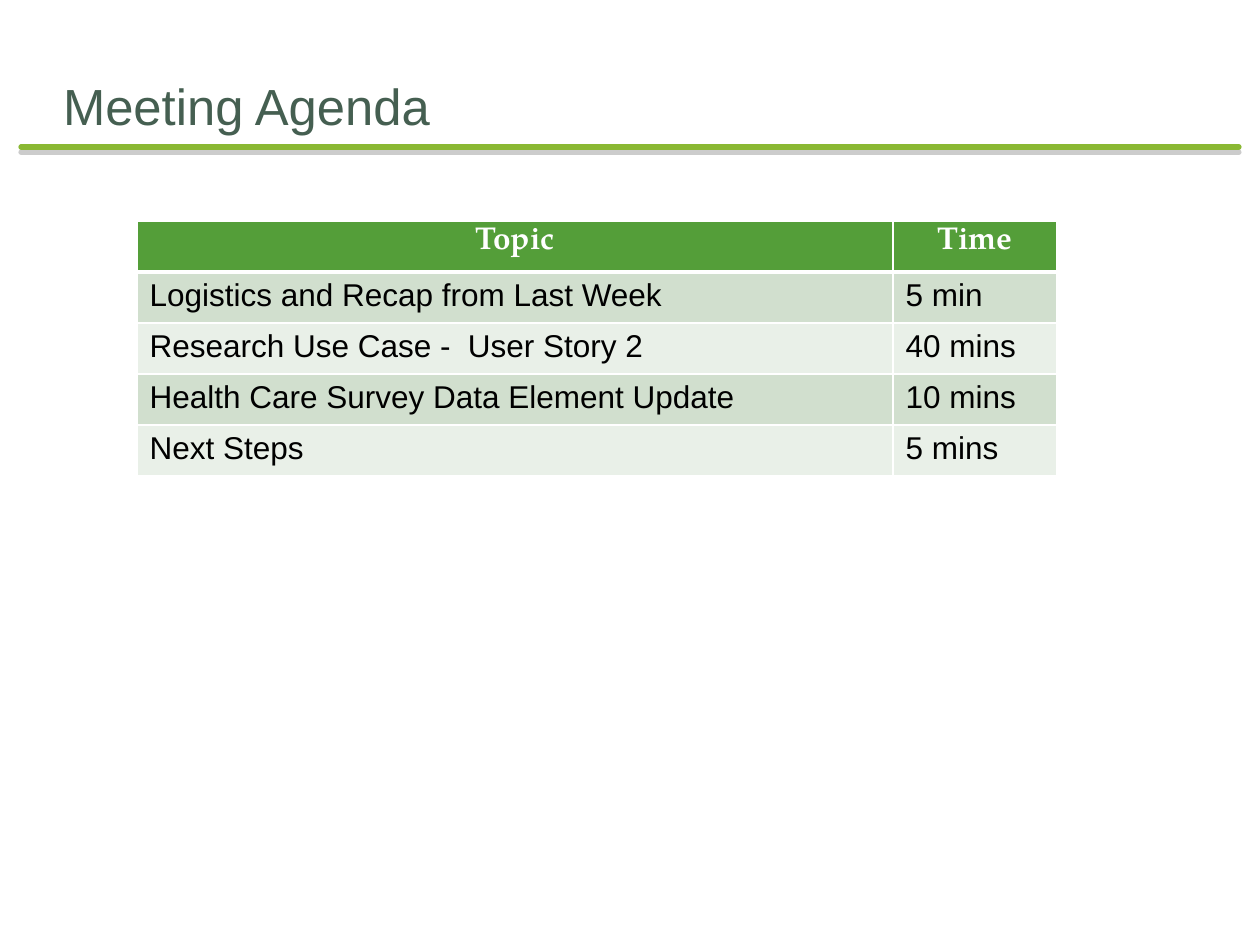
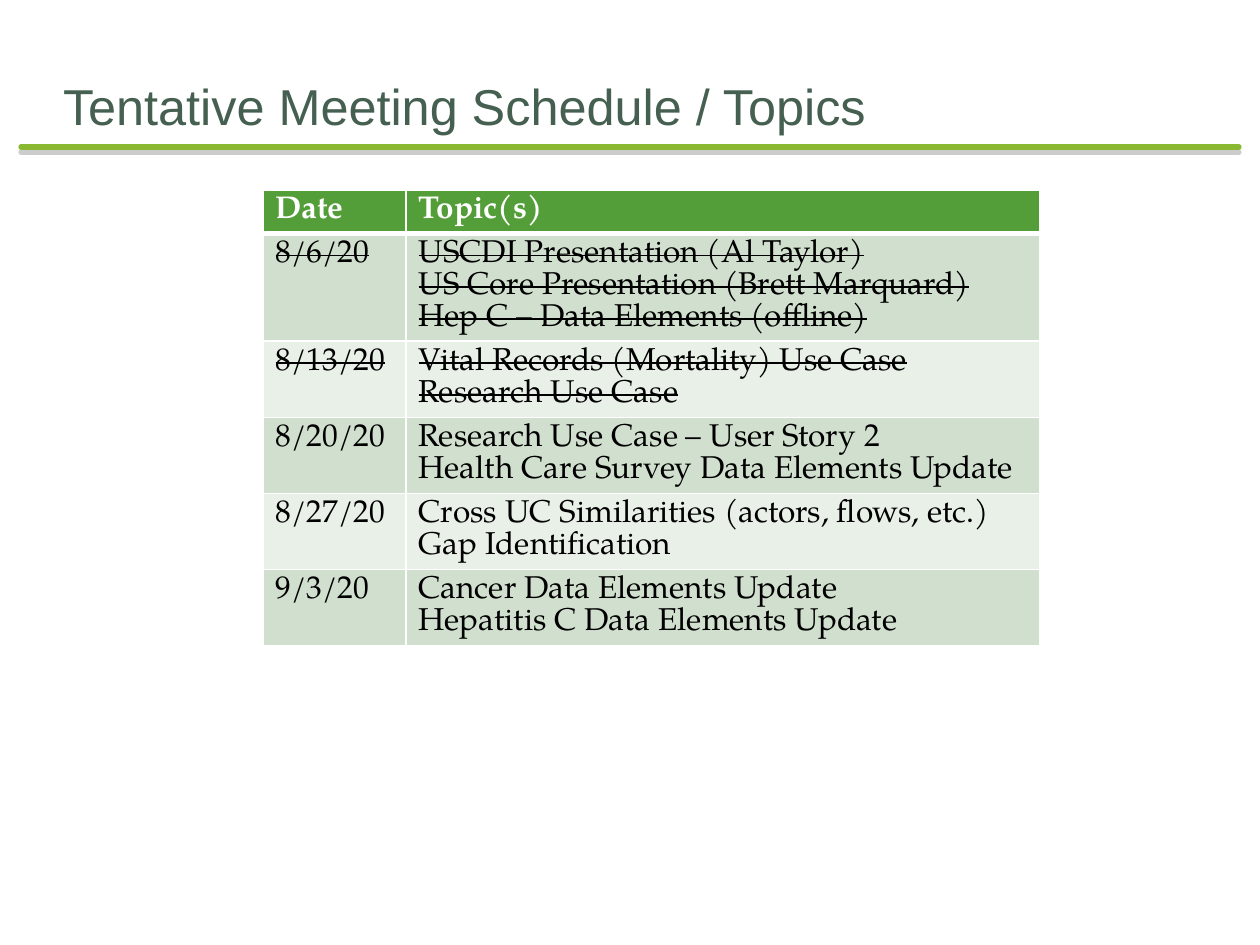
from lxml import etree
from pptx import Presentation
from pptx.dml.color import RGBColor
from pptx.enum.shapes import MSO_CONNECTOR
from pptx.enum.text import MSO_ANCHOR, MSO_AUTO_SIZE, PP_ALIGN
from pptx.oxml import parse_xml
from pptx.oxml.ns import nsdecls, qn
from pptx.util import Pt

PX = 914400 / 126
SLIDE_WIDTH, SLIDE_HEIGHT = 1260, 945
TITLE_ONLY_LAYOUT = 5

LEFT, CENTER = PP_ALIGN.LEFT, PP_ALIGN.CENTER
BOTTOM, TOP = MSO_ANCHOR.BOTTOM, MSO_ANCHOR.TOP
NO_AUTOFIT = MSO_AUTO_SIZE.NONE
STRAIGHT = MSO_CONNECTOR.STRAIGHT

SANS, SERIF = "Arial", "TeX Gyre Pagella"
WHITE, BLACK = "FFFFFF", "000000"
TITLE_COLOR, RULE_COLOR, SHADOW_COLOR = "455F51", "8AB833", "808080"
HEADER_FILL, BAND_FILLS = "549E39", ("D1DFCE", "E9F0E8")
TABLE_SIZE = 18

AGENDA = [
    ("Topic", "Time"),
    ("Logistics and Recap from Last Week", "5 min"),
    ("Research Use Case -  User Story 2", "40 mins"),
    ("Health Care Survey Data Element Update", "10 mins"),
    ("Next Steps", "5 mins"),
]
SCHEDULE = [
    ("Date", "Topic(s)"),
    ("8/6/20", "USCDI Presentation (Al Taylor)\n"
               "US Core Presentation (Brett Marquard)\n"
               "Hep C – Data Elements (offline)"),
    ("8/13/20", "Vital Records (Mortality) Use Case\nResearch Use Case"),
    ("8/20/20", "Research Use Case – User Story 2\n"
                "Health Care Survey Data Elements Update"),
    ("8/27/20", "Cross UC Similarities (actors, flows, etc.)\n"
                "Gap Identification"),
    ("9/3/20", "Cancer Data Elements Update\nHepatitis C Data Elements Update"),
]
PAST_MEETINGS = (1, 2)


def px(length):
    return round(length * PX)


def rgb(color):
    return RGBColor.from_string(color)


def style_text(frame, font, size, color, bold=False, align=LEFT, strike=False):
    for paragraph in frame.paragraphs:
        paragraph.alignment = align
        for run in paragraph.runs:
            run.font.name = font
            run.font.size = Pt(size)
            run.font.bold = bold
            run.font.color.rgb = rgb(color)
            if strike:
                run._r.get_or_add_rPr().set("strike", "sngStrike")


def add_title(slide, text, size):
    title = slide.shapes.title
    title.left, title.top = px(63), px(63)
    title.width, title.height = px(1134), px(73)
    frame = title.text_frame
    frame.text = text
    frame.word_wrap = True
    frame.auto_size = NO_AUTOFIT
    frame.vertical_anchor = BOTTOM
    frame.margin_left = frame.margin_right = frame.margin_bottom = 0
    frame.margin_top = px(6)
    style_text(frame, SANS, size, TITLE_COLOR)


def add_title_rule(slide):
    """Draw the round-ended line under the title, with its hard shadow."""
    rule = slide.shapes.add_connector(STRAIGHT, px(21), px(147), px(1239), px(147))
    rule.line.color.rgb = rgb(RULE_COLOR)
    rule.line.width = Pt(3)
    properties = rule._element.spPr
    properties.find(qn("a:ln")).set("cap", "rnd")
    properties.append(parse_xml(
        f'<a:effectLst {nsdecls("a")}>'
        f'<a:outerShdw blurRad="0" dist="{Pt(3)}" dir="5400000" rotWithShape="0">'
        f'<a:srgbClr val="{SHADOW_COLOR}"><a:alpha val="40000"/></a:srgbClr>'
        '</a:outerShdw></a:effectLst>'))


def add_slide(deck, title, title_size):
    slide = deck.slides.add_slide(deck.slide_layouts[TITLE_ONLY_LAYOUT])
    add_title_rule(slide)
    add_title(slide, title, title_size)
    return slide


def set_borders(cell, widths):
    """Give the cell white borders; widths maps each side (L, R, T, B) to points."""
    properties = cell._tc.get_or_add_tcPr()
    for side, width in widths.items():
        border = etree.SubElement(properties, qn(f"a:ln{side}"), w=str(Pt(width)))
        fill = etree.SubElement(border, qn("a:solidFill"))
        etree.SubElement(fill, qn("a:srgbClr"), val=WHITE)


def add_banded_table(slide, rows, left, top, widths, heights, body_font,
                     header_align=LEFT, struck_rows=()):
    table = slide.shapes.add_table(
        len(rows), len(widths), px(left), px(top),
        px(sum(widths)), px(sum(heights))).table
    for column, width in zip(table.columns, widths):
        column.width = px(width)
    for index, (texts, height) in enumerate(zip(rows, heights)):
        table.rows[index].height = px(height)
        is_header = index == 0
        for cell, text in zip(table.rows[index].cells, texts):
            cell.text_frame.text = text
            cell.vertical_anchor = TOP
            set_borders(cell, {"L": 1, "R": 1, "T": 3 if index == 1 else 1,
                               "B": 3 if is_header else 1})
            cell.fill.solid()
            fill = HEADER_FILL if is_header else BAND_FILLS[(index - 1) % 2]
            cell.fill.fore_color.rgb = rgb(fill)
            if is_header:
                style_text(cell.text_frame, SERIF, TABLE_SIZE, WHITE,
                           bold=True, align=header_align)
            else:
                style_text(cell.text_frame, body_font, TABLE_SIZE, BLACK,
                           strike=index in struck_rows)


def main():
    deck = Presentation()
    deck.slide_width, deck.slide_height = px(SLIDE_WIDTH), px(SLIDE_HEIGHT)

    agenda = add_slide(deck, "Meeting Agenda", 29)
    add_banded_table(agenda, AGENDA, 137, 221, (756, 164), [51] * len(AGENDA),
                     SANS, header_align=CENTER)

    schedule = add_slide(deck, "Tentative Meeting Schedule / Topics", 28.8)
    add_banded_table(schedule, SCHEDULE, 263, 190, (143, 634),
                     [20] + [51] * (len(SCHEDULE) - 1),
                     SERIF, struck_rows=PAST_MEETINGS)

    deck.save("out.pptx")


if __name__ == "__main__":
    main()
